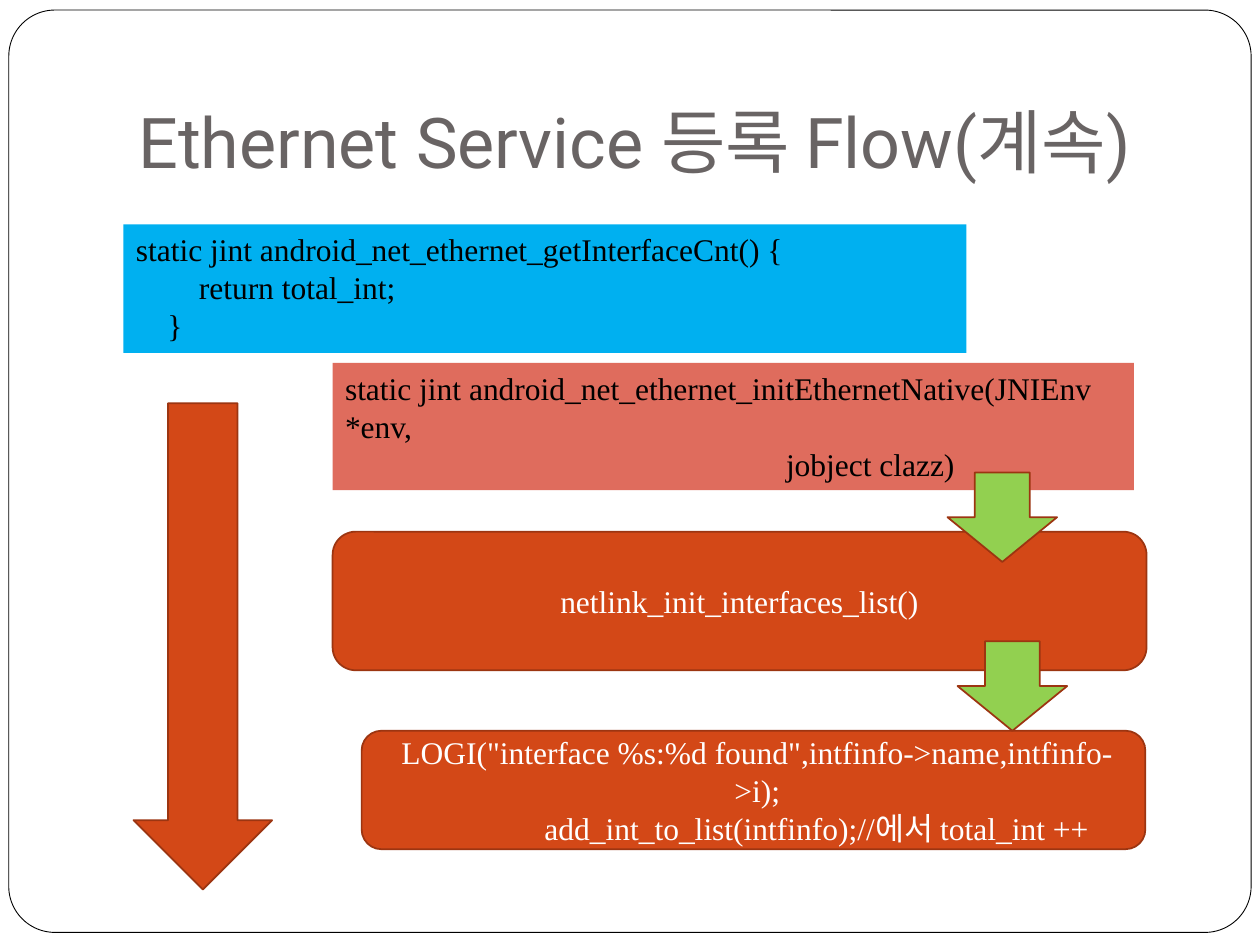
from dataclasses import dataclass

from pptx import Presentation
from pptx import util as u
from pptx.dml.color import RGBColor
from pptx.enum import shapes, text


@dataclass(frozen=True)
class Theme:
    """Colours, fonts and type sizes of the deck."""
    white: str = "FFFFFF"
    black: str = "000000"
    title: str = "696464"
    blue: str = "00B0F0"
    coral: str = "DF6C5D"
    orange: str = "D34817"
    green: str = "92D050"
    outline: str = "9C3511"
    title_font: str = "Roboto"
    body_font: str = "Times New Roman"
    title_size: int = 40
    body_size: int = 18


THEME = Theme()
KIND = shapes.MSO_SHAPE
ALIGN = text.PP_ALIGN
ANCHOR = text.MSO_ANCHOR


def add_block(page, kind, box, fill, line=None, width=1):
    """Place a flat filled shape in the box, outlined if a line colour is given."""
    block = page.shapes.add_shape(kind, *map(u.Inches, box))
    block.shadow.inherit = False
    block.fill.solid()
    block.fill.fore_color.rgb = RGBColor.from_string(fill)
    if line:
        block.line.color.rgb = RGBColor.from_string(line)
        block.line.width = u.Pt(width)
    else:
        block.line.fill.background()
    return block


def write_lines(frame, lines, font, size, color, align=ALIGN.LEFT):
    """Write (wording, indent in inches) pairs as paragraphs of the frame."""
    frame.word_wrap = True
    for index, (wording, indent) in enumerate(lines):
        para = frame.paragraphs[0] if index == 0 else frame.add_paragraph()
        para.alignment = align
        if indent:
            para._p.get_or_add_pPr().set("marL", str(u.Inches(indent)))
        span = para.add_run()
        span.text = wording
        span.font.name = font
        span.font.size = u.Pt(size)
        span.font.color.rgb = RGBColor.from_string(color)


def add_frame(page, box):
    """Draw the thin rounded border around the page."""
    border = add_block(page, KIND.ROUNDED_RECTANGLE, box, THEME.white, THEME.black, 0.5)
    border.adjustments[0] = 0.05


def add_title(page, box, wording):
    """Place the page title, resting on the bottom of its box."""
    frame = page.shapes.add_textbox(*map(u.Inches, box)).text_frame
    frame.vertical_anchor = ANCHOR.BOTTOM
    frame.margin_bottom = u.Inches(0.1)
    write_lines(frame, [(wording, 0)], THEME.title_font, THEME.title_size, THEME.title)


def add_code(page, box, fill, lines):
    """Place a code panel with black text from its top left."""
    frame = add_block(page, KIND.RECTANGLE, box, fill).text_frame
    frame.vertical_anchor = ANCHOR.TOP
    write_lines(frame, lines, THEME.body_font, THEME.body_size, THEME.black)


def add_step(page, box, lines):
    """Place a rounded flow step with centred white text."""
    step = add_block(page, KIND.ROUNDED_RECTANGLE, box, THEME.orange, THEME.outline)
    step.text_frame.vertical_anchor = ANCHOR.MIDDLE
    write_lines(step.text_frame, lines, THEME.body_font, THEME.body_size,
                THEME.white, ALIGN.CENTER)


def add_arrow(page, box, fill):
    """Place a block arrow pointing down."""
    add_block(page, KIND.DOWN_ARROW, box, fill, THEME.outline)


def build_flow_page(page):
    """Lay out the registration flow."""
    add_frame(page, (0.07, 0.08, 9.86, 7.32))
    add_title(page, (1, 0.3, 8.5, 1.25), "Ethernet Service 등록 Flow(계속)")
    add_code(page, (0.98, 1.78, 6.69, 1.02), THEME.blue, [
        ("static jint android_net_ethernet_getInterfaceCnt() {", 0),
        ("return total_int;", 0.5),
        ("}", 0.25)])
    add_code(page, (2.64, 2.88, 6.36, 1.01), THEME.coral, [
        ("static jint android_net_ethernet_initEthernetNative(JNIEnv *env,", 0),
        ("jobject clazz)", 3.5)])
    add_step(page, (2.64, 4.22, 6.46, 1.1), [("netlink_init_interfaces_list()", 0)])
    add_step(page, (2.87, 5.8, 6.22, 0.94), [
        ('LOGI("interface %s:%d found",intfinfo->name,intfinfo->i);', 0.06),
        ("add_int_to_list(intfinfo);//에서 total_int ++", 1)])
    for left, top in ((7.52, 3.75), (7.6, 5.09)):
        add_arrow(page, (left, top, 0.87, 0.71), THEME.green)
    add_arrow(page, (1.06, 3.2, 1.1, 3.86), THEME.orange)


def main():
    """Build and save the deck."""
    deck = Presentation()
    deck.slide_width, deck.slide_height = u.Inches(10), u.Inches(7.5)
    build_flow_page(deck.slides.add_slide(deck.slide_layouts[6]))
    deck.save("out.pptx")


if __name__ == "__main__":
    main()
